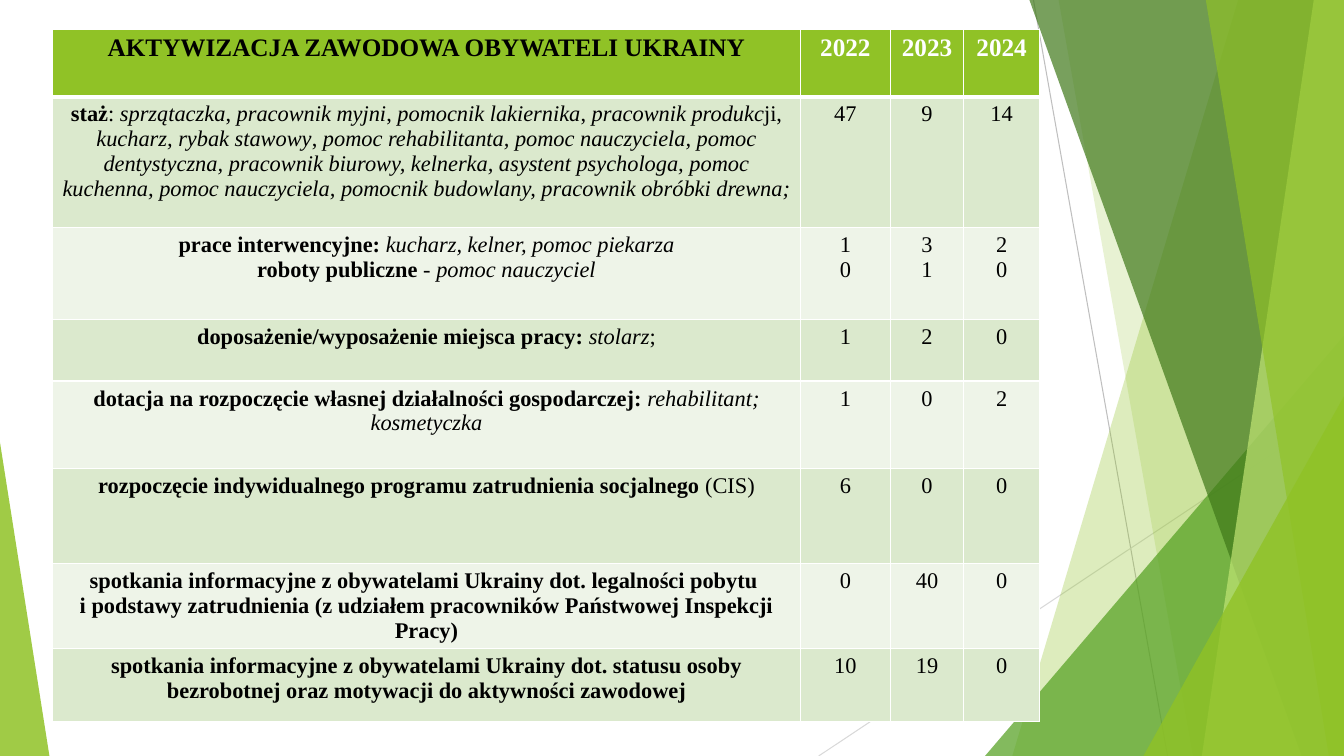
import lxml.etree
import pptx
import pptx.dml.color
import pptx.enum.shapes
import pptx.enum.text
import pptx.oxml.ns
import pptx.util

THEME = {
    "font": "Times New Roman", "header_size": 18, "body_size": 16,
    "text": "000000", "white": "FFFFFF",
    "lime": "90C226", "green": "54A021", "forest": "3F7819", "pale": "C0E474",
    "dark_line": "BFBFBF", "light_line": "D9D9D9",
    "row_bands": ["DBE9CD", "EEF4E8"],
}

# The slide is a grid of 1333 columns by 750 rows
UNIT = pptx.util.Inches(0.01)
COLUMNS, ROWS = 1333, 750
qn = pptx.oxml.ns.qn


def write(paragraph, text, size=THEME["body_size"], color=THEME["text"], bold=False, italic=False):
    paragraph.alignment = pptx.enum.text.PP_ALIGN.CENTER
    for index, line in enumerate(text.split("\v")):
        if index:
            paragraph.add_line_break()
        run = paragraph.add_run()
        run.text = line
        run.font.name = THEME["font"]
        run.font.size = pptx.util.Pt(size)
        run.font.bold = bold
        run.font.italic = italic
        run.font.color.rgb = pptx.dml.color.RGBColor.from_string(color)


presentation = pptx.Presentation()
presentation.slide_width = COLUMNS * UNIT
presentation.slide_height = ROWS * UNIT
slide = presentation.slides.add_slide(presentation.slide_layouts[6])
shapes = slide.shapes

# Thin crossing lines
for start_x, start_y, end_x, end_y, color in [
    (1025, 0, 1158, ROWS, "dark_line"),
    (COLUMNS, 403, 812, ROWS, "light_line"),
]:
    line = shapes.add_connector(
        pptx.enum.shapes.MSO_CONNECTOR.STRAIGHT,
        start_x * UNIT, start_y * UNIT, end_x * UNIT, end_y * UNIT)
    line.line.color.rgb = pptx.dml.color.RGBColor.from_string(THEME[color])
    line.line.width = pptx.util.Pt(0.75)
    lxml.etree.SubElement(line._element.spPr, qn("a:effectLst"))

# Translucent facets: a band has its top and bottom x, a triangle its box and apex
facets = [
    ("band", (1228, 1004), "lime", 30),
    ("band", (1050, 1183), "lime", 20),
    ("triangle", (977, 333, 356, 417, 1), "green", 72),
    ("band", (1021, 1291), "forest", 70),
    ("band", (1303, 1192), "pale", 70),
    ("band", (1196, 1318), "lime", 65),
    ("triangle", (1134, 393, 199, 357, 1), "lime", 80),
    ("triangle", (0, 439, 49, 311, 0), "lime", 85),
]
for kind, geometry, color, opacity in facets:
    if kind == "band":
        top_x, bottom_x = geometry
        outline = shapes.build_freeform(top_x, 0, scale=UNIT)
        outline.add_line_segments([(COLUMNS, 0), (COLUMNS, ROWS), (bottom_x, ROWS)])
        facet = outline.convert_to_shape()
    else:
        *box, apex = geometry
        facet = shapes.add_shape(
            pptx.enum.shapes.MSO_SHAPE.ISOSCELES_TRIANGLE, *[length * UNIT for length in box])
        facet.adjustments[0] = apex
    facet.shadow.inherit = False
    facet.line.fill.background()
    facet.fill.solid()
    facet.fill.fore_color.rgb = pptx.dml.color.RGBColor.from_string(THEME[color])
    color_element = facet._element.spPr.find(f"{qn('a:solidFill')}/{qn('a:srgbClr')}")
    lxml.etree.SubElement(color_element, qn("a:alpha"), val=str(opacity * 1000))

# Table content: each activity is a list of paragraphs made of (text, style) pieces
BOLD, ITALIC, PLAIN = {"bold": True}, {"italic": True}, {}
HEADER = {"bold": True, "size": THEME["header_size"]}
YEAR = {**HEADER, "color": THEME["white"]}
activities = [
    ([[("AKTYWIZACJA ZAWODOWA OBYWATELI UKRAINY", HEADER)]], ["2022", "2023", "2024"]),
    ([[("staż", BOLD), (": ", PLAIN), ("sprzątaczka", ITALIC), (",", PLAIN),
       (" pracownik myjni", ITALIC), (",", PLAIN), (" pomocnik lakiernika", ITALIC), (",", PLAIN),
       (" pracownik produkc", ITALIC), ("ji, ", PLAIN), ("kucharz, rybak stawowy", ITALIC),
       (",", PLAIN),
       (" pomoc rehabilitanta, pomoc nauczyciela, pomoc dentystyczna, pracownik biurowy, "
        "kelnerka, asystent psychologa, pomoc kuchenna, pomoc nauczyciela, "
        "pomocnik budowlany, pracownik obróbki drewna;", ITALIC)]], ["47", "9", "14"]),
    ([[("prace interwencyjne: ", BOLD), ("kucharz, kelner, pomoc piekarza", ITALIC)],
      [("roboty publiczne ", BOLD), ("- ", PLAIN), ("pomoc nauczyciel", ITALIC)]],
     ["1\n0", "3\n1", "2\n0"]),
    ([[("doposażenie/wyposażenie miejsca pracy: ", BOLD), ("stolarz", ITALIC), (";", PLAIN)]],
     ["1", "2", "0"]),
    ([[("dotacja na rozpoczęcie własnej działalności gospodarczej: ", BOLD),
       ("rehabilitant; kosmetyczka", ITALIC)]], ["1", "0", "2"]),
    ([[("rozpoczęcie indywidualnego programu zatrudnienia socjalnego ", BOLD), ("(CIS)", PLAIN)]],
     ["6", "0", "0"]),
    ([[("spotkania informacyjne z obywatelami Ukrainy dot. legalności pobytu \v"
        "i podstawy zatrudnienia (z udziałem pracowników Państwowej Inspekcji Pracy)", BOLD)]],
     ["0", "40", "0"]),
    ([[("spotkania informacyjne z obywatelami Ukrainy dot. statusu osoby bezrobotnej "
        "oraz motywacji do aktywności zawodowej", BOLD)]], ["10", "19", "0"]),
]
column_widths = [742, 89, 73, 75]
row_heights = [67, 130, 91, 61, 87, 94, 84, 73]

# Table
table = shapes.add_table(
    len(activities), len(column_widths), 52 * UNIT, 29 * UNIT,
    sum(column_widths) * UNIT, sum(row_heights) * UNIT).table
table.horz_banding = False
for column, width in zip(table.columns, column_widths):
    column.width = width * UNIT
for row, height in zip(table.rows, row_heights):
    row.height = height * UNIT

for row_index, (description, counts) in enumerate(activities):
    count_style = PLAIN if row_index else YEAR
    count_cells = [[[(line, count_style)] for line in count.split("\n")] for count in counts]
    fill_color = THEME["row_bands"][(row_index - 1) % 2] if row_index else THEME["lime"]
    for column_index, paragraphs in enumerate([description, *count_cells]):
        cell = table.cell(row_index, column_index)
        cell.margin_left = cell.margin_right = 7 * UNIT
        cell.fill.solid()
        cell.fill.fore_color.rgb = pptx.dml.color.RGBColor.from_string(fill_color)
        for index, pieces in enumerate(paragraphs):
            frame = cell.text_frame
            paragraph = frame.add_paragraph() if index else frame.paragraphs[0]
            for text, style in pieces:
                write(paragraph, text, **style)

        # White cell borders, thick below the header
        properties = cell._tc.get_or_add_tcPr()
        for position, side in enumerate(["lnL", "lnR", "lnT", "lnB"]):
            thick = (row_index, side) in [(0, "lnB"), (1, "lnT")]
            border = lxml.etree.Element(
                qn(f"a:{side}"), w=str(pptx.util.Pt(3 if thick else 1)))
            border_fill = lxml.etree.SubElement(border, qn("a:solidFill"))
            lxml.etree.SubElement(border_fill, qn("a:srgbClr"), val=THEME["white"])
            properties.insert(position, border)

presentation.save("out.pptx")
